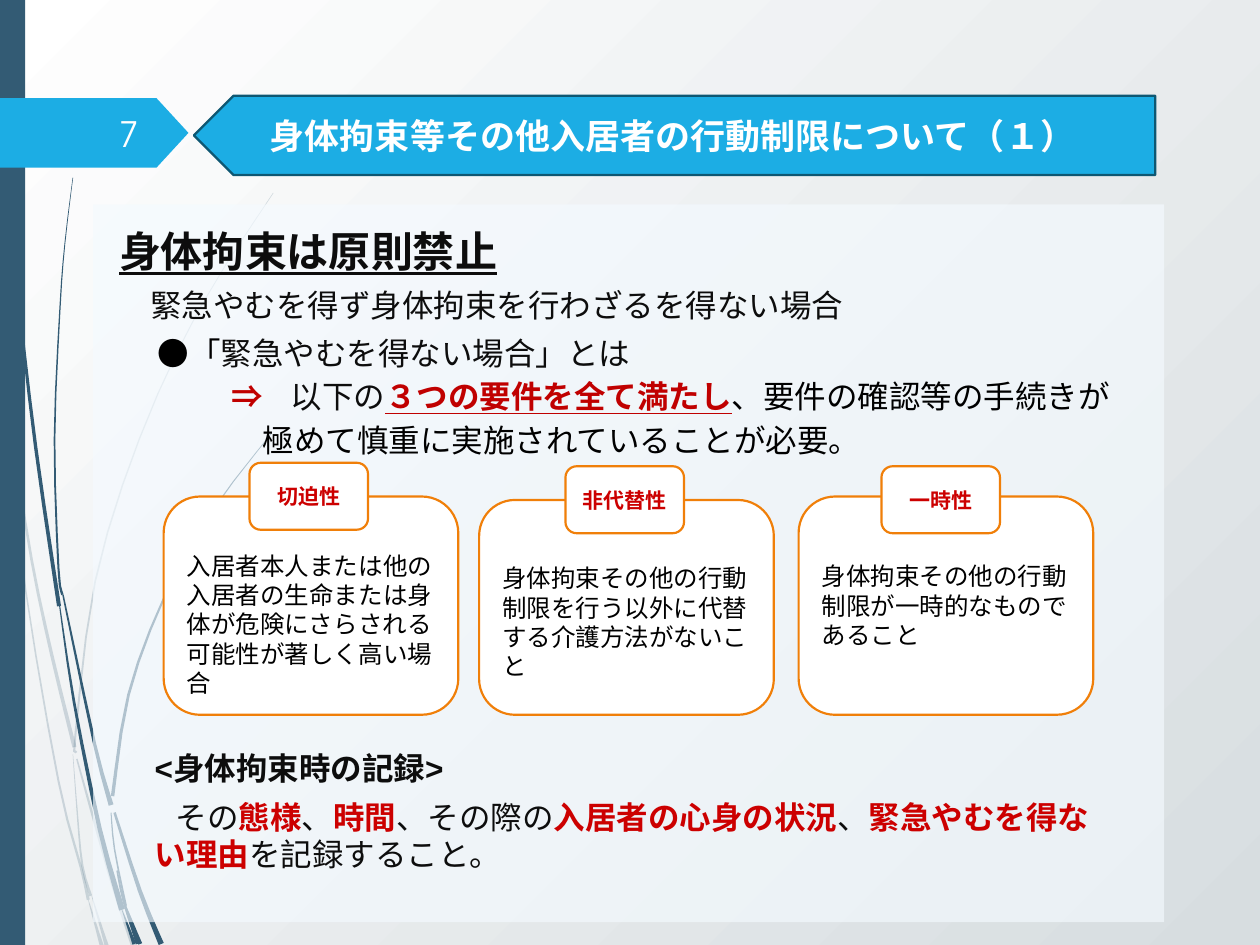
from math import hypot

from lxml.etree import SubElement
from pptx import Presentation
from pptx.dml.color import RGBColor
from pptx.enum.shapes import MSO_SHAPE
from pptx.enum.text import MSO_ANCHOR, PP_ALIGN
from pptx.oxml.ns import qn
from pptx.util import Cm, Pt

COLORS = {
    "white": "FFFFFF", "mist": "D7DDE0", "slate": "335B74", "sky": "1CADE4",
    "navy": "0E5772", "panel": "F4FAFF", "orange": "F07F09", "red": "CC0000",
    "crimson": "C00000", "ink": "0D0D0D", "black": "000000", "number": "FEFFFF",
}
GOTHIC = "TeX Gyre Adventor"
STRANDS_PALE = [
    ([(0, 7.37), (.1, 8.08), (.18, 8.83)], .1, .02),
    ([(.26, 8.9), (.64, 11.3), (1.05, 13.23), (1.5, 15.06)], .04, .08),
    ([(1.55, 15.3), (2.2, 17.6), (2.69, 19.06)], .03, .1),
    ([(.2, 8.89), (.52, 11.91), (1.18, 15.75), (1.63, 17.48), (1.78, 18.14)], .02, .06),
    ([(1.78, 18.14), (2.05, 19.06)], .01, .08),
    ([(1.47, 15.21), (1.56, 16.41), (1.66, 17.45), (1.83, 18.06)], .01, .06),
    ([(1.85, 18.06), (2.15, 19.06)], .01, .08),
    ([(5.51, 3.89), (4.03, 6.21), (2.81, 8.85), (1.92, 11.72), (1.52, 14.83), (1.54, 15.14)], .01, .05),
]
STRANDS_DARK = [
    ([(.08, 0), (.14, 2.79), (.37, 5.92), (.72, 9.02), (1.19, 12.22)], .03, .08),
    ([(1.19, 12.12), (1.49, 14.14), (2.01, 16.71), (2.46, 18.34)], .02, .12),
    ([(2.46, 18.34), (2.71, 19.03)], .01, .08),
    ([(1.47, 3.58), (1.31, 4.9), (1.21, 6.22), (1.1, 8.86), (1.18, 11.46), (1.26, 11.99)], .01, .05),
    ([(1.27, 11.99), (1.91, 15.01), (2.24, 16.23)], .03, .1),
    ([(2.31, 16.38), (2.82, 17.96), (3.25, 19.03)], .05, .11),
    ([(5.47, 8.74), (4.28, 10.3), (3.3, 12.07), (2.59, 14.01), (2.27, 16.05)], .01, .07),
    ([(2.24, 16.38), (2.31, 17.12), (2.54, 18.26)], .02, .04),
    ([(2.36, 17.55), (2.49, 18.16), (2.77, 19.03)], .03, .06),
    ([(2.54, 18.26), (2.83, 19.03)], .01, .08),
]


def paint(shape, fill, line=None, opacity=100):
    shape.shadow.inherit = False
    shape.fill.solid()
    shape.fill.fore_color.rgb = RGBColor.from_string(COLORS[fill])
    if opacity < 100:
        color = shape.fill._xPr.find(".//" + qn("a:srgbClr"))
        SubElement(color, qn("a:alpha"), val=str(opacity * 1000))
    if line:
        shape.line.color.rgb = RGBColor.from_string(COLORS[line])
        shape.line.width = Pt(1.25)
    else:
        shape.line.fill.background()


def add_box(page, kind, box, fill, **look):
    shape = page.shapes.add_shape(kind, *map(Cm, box))
    paint(shape, fill, **look)
    return shape


def add_span(para, text, size=18, font="Arial", color="ink", bold=False, underline=False):
    span = para.add_run()
    span.text = text
    span.font.size = Pt(size)
    span.font.name = font
    span.font.bold = bold
    span.font.underline = underline
    span.font.color.rgb = RGBColor.from_string(COLORS[color])


def add_para(frame, spans, align=PP_ALIGN.LEFT, before=0, left=0, first=0):
    para = frame.paragraphs[0]
    if para.runs:
        para = frame.add_paragraph()
    para.alignment = align
    para.space_before = Pt(before)
    properties = para._p.get_or_add_pPr()
    properties.set("marL", str(Cm(left)))
    properties.set("indent", str(Cm(first)))
    for text, look in spans:
        add_span(para, text, **look)


def set_frame(shape, anchor=MSO_ANCHOR.MIDDLE, left=.25, top=.13):
    frame = shape.text_frame
    frame.word_wrap = True
    frame.vertical_anchor = anchor
    frame.margin_left, frame.margin_top = Cm(left), Cm(top)
    frame.margin_right, frame.margin_bottom = Cm(.25), Cm(.13)
    return frame


def smooth(points, steps=3):
    padded = [points[0], *points, points[-1]]
    curve = []
    for a, b, c, d in zip(padded, padded[1:], padded[2:], padded[3:]):
        for step in range(steps):
            t = step / steps
            curve.append(tuple(
                q + t * (r - p + t * (2 * p - 5 * q + 4 * r - s + t * (3 * (q - r) + s - p))) / 2
                for p, q, r, s in zip(a, b, c, d)))
    return curve + [points[-1]]


def add_strand(page, points, start, end, opacity):
    curve = smooth(points)
    last = len(curve) - 1
    one_side, other_side = [], []
    for index, (x, y) in enumerate(curve):
        x0, y0 = curve[max(index - 1, 0)]
        x1, y1 = curve[min(index + 1, last)]
        half = (start + (end - start) * index / last) / 2 / hypot(x1 - x0, y1 - y0)
        dx, dy = (y1 - y0) * half, (x0 - x1) * half
        one_side.append((Cm(x + dx), Cm(y + dy)))
        other_side.append((Cm(x - dx), Cm(y - dy)))
    outline = one_side + other_side[::-1]
    builder = page.shapes.build_freeform(*outline[0])
    builder.add_line_segments(outline[1:], close=True)
    paint(builder.convert_to_shape(), "slate", opacity=opacity)


def add_backdrop(page, height):
    fill = page.background.fill
    fill.gradient()
    fill.gradient_angle = 315
    for stop, position, color in zip(fill.gradient_stops, (0, 1), ("white", "mist")):
        stop.position = position
        stop.color.rgb = RGBColor.from_string(COLORS[color])
    for strands, opacity in ((STRANDS_PALE, 20), (STRANDS_DARK, 100)):
        for points, start, end in strands:
            add_strand(page, points, start, end, opacity)
    add_box(page, MSO_SHAPE.RECTANGLE, (0, 0, .51, height), "slate")


def add_page_number(page, left, top, width, height):
    arrow = add_box(page, MSO_SHAPE.PENTAGON, (left, top, width, height), "sky")
    arrow.adjustments[0] = .46
    label = page.shapes.add_textbox(Cm(left + 1.42), Cm(top + .2), Cm(1.63), Cm(1.02))
    add_para(set_frame(label), [("7", dict(size=20, font=GOTHIC, color="number"))], PP_ALIGN.RIGHT)


def add_title(page, box):
    banner = add_box(page, MSO_SHAPE.PENTAGON, box, "sky", line="navy")
    banner._element.spPr.find(qn("a:xfrm")).set("flipH", "1")
    title = page.shapes.title
    title.left, title.top, title.width, title.height = map(Cm, box)
    banner._element.addnext(title._element)
    add_para(set_frame(title, left=1.53), [
        ("身体拘束等その他入居者の行動制限について（１）",
         dict(size=20, font=GOTHIC, color="white", bold=True))])


def add_panel(page, box):
    panel = add_box(page, MSO_SHAPE.RECTANGLE, box, "panel", opacity=65)
    frame = set_frame(panel, MSO_ANCHOR.TOP, top=.42)
    black = dict(color="black")
    add_para(frame, [("身体拘束は原則禁止", dict(size=24, bold=True, underline=True))], left=.27)
    add_para(frame, [("緊急やむを得ず身体拘束を行わざるを得ない場合", {})], before=6, left=.9)
    add_para(frame, [("●「", black), ("緊急やむを得ない場合」とは", {})], before=6, left=1.05)
    add_para(frame, [
        ("⇒\t", dict(color="crimson", bold=True)), ("以下の", {}),
        ("３つの要件を全て満たし", dict(color="crimson", bold=True, underline=True)),
        ("、要件の確認等の手続きが", black)], before=3, left=3.73, first=-1.19)
    add_para(frame, [("極めて慎重に実施されていることが必要。", black)], before=3, left=3.17)


def add_card(page, box, tag_left, tag_top, label, text, anchor, text_top=.13):
    card = add_box(page, MSO_SHAPE.ROUNDED_RECTANGLE, box, "white", line="orange")
    add_para(set_frame(card, anchor, top=text_top), [(text, dict(size=14, font=GOTHIC, color="black"))])
    tag_box = (tag_left, tag_top, 2.39, 1.35)
    tag = add_box(page, MSO_SHAPE.ROUNDED_RECTANGLE, tag_box, "white", line="orange")
    add_para(set_frame(tag), [(label, dict(size=12, font=GOTHIC, color="red", bold=True))], PP_ALIGN.CENTER)


def add_records(page, box):
    frame = set_frame(page.shapes.add_textbox(*map(Cm, box)))
    red = dict(color="red", bold=True)
    add_para(frame, [("<身体拘束時の記録>", dict(bold=True))])
    add_para(frame, [
        ("その", {}), ("態様", red), ("、", {}), ("時間", red), ("、その際の", {}),
        ("入居者の心身の状況", red), ("、", {}), ("緊急やむを得ない理由", red),
        ("を記録すること。", {})], before=6, first=.42)


def main():
    deck = Presentation()
    deck.slide_width, deck.slide_height = Cm(25.4), Cm(19.05)
    page = deck.slides.add_slide(deck.slide_layouts[5])
    add_backdrop(page, 19.05)
    add_page_number(page, 0, 1.98, 3.8, 1.4)
    add_panel(page, (1.88, 4.12, 21.59, 14.47))
    add_card(page, (3.3, 10.01, 5.94, 4.4), 5.03, 9.33, "切迫性",
             "入居者本人または他の入居者の生命または身体が危険にさらされる可能性が著しく高い場合",
             MSO_ANCHOR.BOTTOM)
    add_card(page, (9.66, 10.08, 5.94, 4.33), 11.4, 9.4, "非代替性",
             "身体拘束その他の行動制限を行う以外に代替する介護方法がないこと",
             MSO_ANCHOR.MIDDLE, text_top=.72)
    add_card(page, (16.1, 10.01, 5.94, 4.4), 17.77, 9.4, "一時性",
             "身体拘束その他の行動制限が一時的なものであること", MSO_ANCHOR.MIDDLE)
    add_records(page, (2.87, 14.55, 19.61, 3.61))
    add_title(page, (3.91, 1.93, 19.38, 1.6))
    deck.save("out.pptx")


if __name__ == "__main__":
    main()
